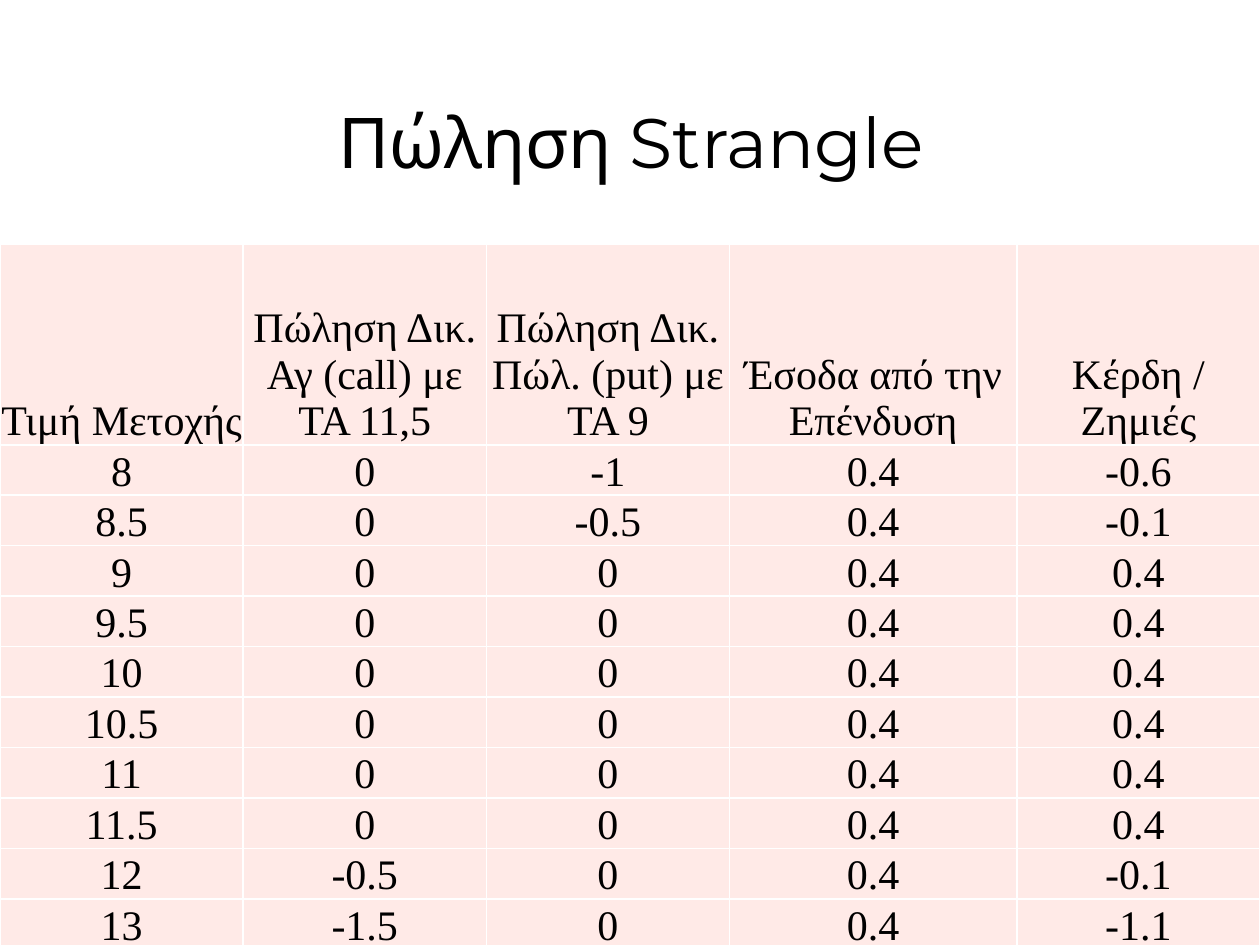
from dataclasses import dataclass

from lxml import etree
from pptx import Presentation
from pptx.dml.color import RGBColor
from pptx.enum.text import MSO_ANCHOR, PP_ALIGN
from pptx.oxml.ns import qn
from pptx.util import Inches, Pt

BOTTOM = MSO_ANCHOR.BOTTOM
CENTER = PP_ALIGN.CENTER

BLACK, WHITE, PINK = "000000", "FFFFFF", "FFEAE7"
BORDER_SIDES = ("a:lnL", "a:lnR", "a:lnT", "a:lnB")
CELL_FORMAT = {
    "vertical_anchor": BOTTOM,
    "margin_left": Inches(0.01),
    "margin_right": Inches(0.01),
    "margin_top": Inches(0),
    "margin_bottom": Inches(0),
}

# Strangle terms: strike prices and the premium received
CALL_STRIKE, PUT_STRIKE, PREMIUM = 11.5, 9, 0.4
STOCK_PRICES = (8, 8.5, 9, 9.5, 10, 10.5, 11, 11.5, 12, 13)
HEADINGS = (
    "Τιμή Μετοχής",
    "Πώληση Δικ. Αγ (call) με ΤΑ 11,5",
    "Πώληση Δικ. Πώλ. (put) με ΤΑ 9",
    "Έσοδα από την Επένδυση",
    "Κέρδη / Ζημιές",
)

# The price rows share the height left below the heading row
PAGE_WIDTH, PAGE_HEIGHT = 10, 7.5
TABLE_TOP, HEADING_HEIGHT = 1.94, 1.59
ROW_HEIGHT = (PAGE_HEIGHT - TABLE_TOP - HEADING_HEIGHT) / len(STOCK_PRICES)
COLUMN_WIDTHS = (1.93, 1.93, 1.93, 2.28, 1.93)


@dataclass(frozen=True)
class TextStyle:
    font: str
    size: float
    color: str = BLACK


TITLE_STYLE = TextStyle("Montserrat", 40)
TABLE_STYLE = TextStyle("Times New Roman", 24)


def rgb(color: str) -> RGBColor:
    return RGBColor.from_string(color)


def write_text(frame, text: str, style: TextStyle) -> None:
    para = frame.paragraphs[0]
    para.alignment = CENTER
    span = para.add_run()
    span.text = text
    settings = {"name": style.font, "size": Pt(style.size)}
    for name, value in settings.items():
        setattr(span.font, name, value)
    span.font.color.rgb = rgb(style.color)


def add_borders(cell, color: str, width: float) -> None:
    properties = cell._tc.get_or_add_tcPr()
    for index, side in enumerate(BORDER_SIDES):
        line = etree.Element(qn(side), w=str(Pt(width)))
        fill = etree.SubElement(line, qn("a:solidFill"))
        etree.SubElement(fill, qn("a:srgbClr"), val=color)
        properties.insert(index, line)


def fill_cell(cell, text: str) -> None:
    for name, value in CELL_FORMAT.items():
        setattr(cell, name, value)
    cell.fill.solid()
    cell.fill.fore_color.rgb = rgb(PINK)
    add_borders(cell, WHITE, 1)
    write_text(cell.text_frame, text, TABLE_STYLE)


def payoff_row(price: float) -> tuple[str, ...]:
    call = min(0, CALL_STRIKE - price)
    put = min(0, price - PUT_STRIKE)
    values = (price, call, put, PREMIUM, call + put + PREMIUM)
    return tuple(f"{value:g}" for value in values)


def add_title(page, text: str) -> None:
    box = page.shapes.add_textbox(Inches(0.44), Inches(0), Inches(9.14), Inches(1.5))
    box.text_frame.word_wrap = True
    box.text_frame.vertical_anchor = BOTTOM
    write_text(box.text_frame, text, TITLE_STYLE)


def add_payoff_table(page) -> None:
    rows = [HEADINGS, *map(payoff_row, STOCK_PRICES)]
    heights = [HEADING_HEIGHT] + [ROW_HEIGHT] * len(STOCK_PRICES)
    table = page.shapes.add_table(
        len(rows), len(HEADINGS), Inches(0), Inches(TABLE_TOP),
        Inches(sum(COLUMN_WIDTHS)), Inches(sum(heights)),
    ).table
    for column, width in zip(table.columns, COLUMN_WIDTHS):
        column.width = Inches(width)
    for table_row, height, texts in zip(table.rows, heights, rows):
        table_row.height = Inches(height)
        for cell, text in zip(table_row.cells, texts):
            fill_cell(cell, text)


def main() -> None:
    deck = Presentation()
    deck.slide_width, deck.slide_height = Inches(PAGE_WIDTH), Inches(PAGE_HEIGHT)
    page = deck.slides.add_slide(deck.slide_layouts[6])
    add_title(page, "Πώληση Strangle")
    add_payoff_table(page)
    deck.save("out.pptx")


if __name__ == "__main__":
    main()
